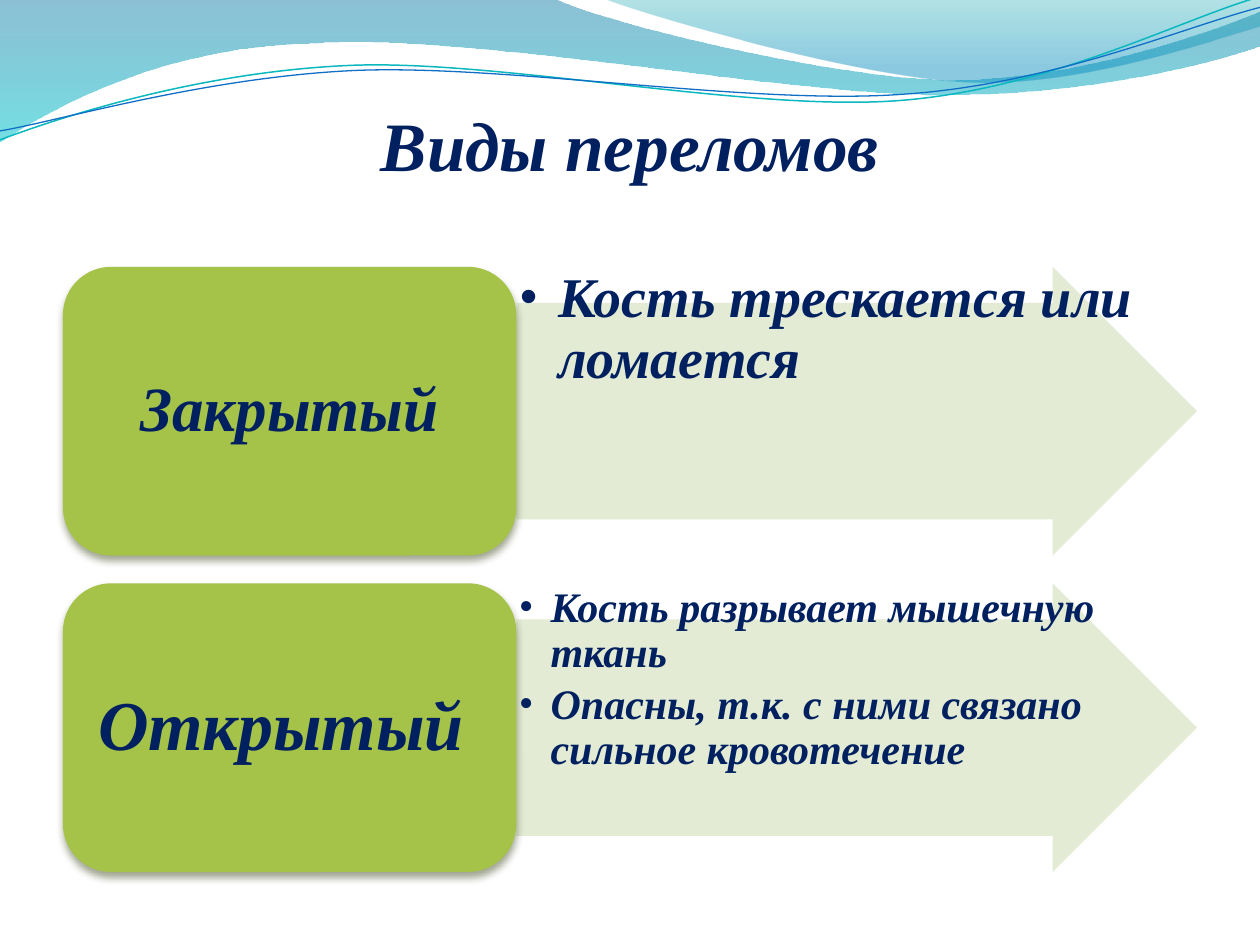
"""Builds a slide on the two kinds of bone fracture."""
from lxml import etree
from pptx import Presentation
from pptx import util as u
from pptx.dml.color import RGBColor
from pptx.enum import shapes, text
from pptx.oxml.ns import qn

NAVY = RGBColor(0x00, 0x20, 0x60)
GREEN = RGBColor(0xA5, 0xC2, 0x49)
PALE = RGBColor(0xE1, 0xE9, 0xD0)
SHADOW = RGBColor(0x3A, 0x45, 0x19)
STEEL = RGBColor(0x00, 0x74, 0xA1)
AQUA = RGBColor(0x00, 0xC6, 0xCF)
SEA = RGBColor(0x00, 0xA1, 0xA9)
SKY = RGBColor(0x00, 0x8B, 0xBF)
TEAL = RGBColor(0x0A, 0xB8, 0xBF)
BLUE = RGBColor(0x0F, 0x6F, 0xC6)
FONT = "Times New Roman"

WAVE = [(0, 0), (11.18, -0.03), (12.09, 0.43, 16.87, 1.6, 19.25, 1.6),
        (21.67, 1.6, 24.33, 0.66, 25.4, 0.23), (25.43, 0.91),
        (24.97, 1.12, 22.1, 1.93, 18.95, 1.91),
        (15.8, 1.91, 9.7, 0.71, 6.53, 0.86),
        (3.28, 0.91, 1.17, 2.11, -0.03, 2.87)]
FAN = [(12.17, -0.03), (12.93, 0.28, 17.32, 1.57, 19.53, 1.65),
       (21.74, 1.75, 24.41, 0.81, 25.4, 0.53), (25.4, 0)]
TEAL_CURVE = [(0, 2.82), (1.22, 2.36, 4.01, 1.45, 7.04, 1.32),
              (10.03, 1.19, 15.06, 2.26, 18.11, 2.03),
              (21.16, 1.8, 23.83, 0.38, 25.35, -0.05)]
BLUE_CURVE = [(0, 2.64), (1.19, 2.44, 4.17, 1.55, 7.19, 1.42),
              (10.24, 1.3, 15.16, 2.13, 18.21, 1.9),
              (21.23, 1.7, 23.9, 0.53, 25.4, 0.15)]

ROWS = [
    ("Закрытый", 36, ["Кость трескается или ломается"], 32, 0.79),
    ("Открытый ", 40, ["Кость разрывает мышечную ткань",
                       "Опасны, т.к. с ними связано сильное кровотечение"], 24, 0.64),
]


def set_alpha(clr, percent):
    """Make a colour element partly transparent."""
    etree.SubElement(clr, qn("a:alpha"), val=str(percent * 1000))


def write(tf, lines, size, align=text.PP_ALIGN.LEFT, anchor=text.MSO_ANCHOR.TOP,
          inset=0.05, spacing=0.9, after=0, indent=0):
    """Fill a text frame, with bullets where an indent is given."""
    tf.word_wrap = True
    tf.auto_size = text.MSO_AUTO_SIZE.NONE
    tf.vertical_anchor = anchor
    tf.margin_left = tf.margin_right = tf.margin_top = tf.margin_bottom = u.Cm(inset)
    for i, line in enumerate(lines):
        p = tf.add_paragraph() if i else tf.paragraphs[0]
        p.alignment, p.line_spacing, p.space_after = align, spacing, u.Pt(after)
        r = p.add_run()
        r.text = line
        font = r.font
        font.name, font.size, font.bold, font.italic = FONT, u.Pt(size), True, True
        font.color.rgb = NAVY
        if indent:
            p.level = 1
            pPr = p._p.get_or_add_pPr()
            pPr.set("marL", str(u.Cm(indent)))
            pPr.set("indent", str(-u.Cm(indent)))
            etree.SubElement(pPr, qn("a:buFont"), typeface=FONT)
            etree.SubElement(pPr, qn("a:buChar"), char="•")


class Deck:
    """Holds the presentation, the current slide and its drawing style."""

    def __init__(self):
        """Open a title-only slide."""
        self.prs = Presentation()
        self.prs.slide_width, self.prs.slide_height = u.Cm(25.4), u.Cm(19.05)
        self.s = self.prs.slides.add_slide(self.prs.slide_layouts[5])

    def title(self, line):
        """Place and format the title."""
        sp = self.s.shapes.title
        sp.left, sp.top, sp.width, sp.height = map(u.Cm, (1.27, 1.96, 22.86, 1.78))
        write(sp.text_frame, [line], 39.6, align=text.PP_ALIGN.CENTER,
              anchor=text.MSO_ANCHOR.BOTTOM, inset=0, spacing=1)

    def outline(self, segments, close):
        """Draw a freeform of straight lines and Bezier curves."""
        ends = [tuple(map(u.Cm, seg[-2:])) for seg in segments]
        builder = self.s.shapes.build_freeform(*ends[0])
        builder.add_line_segments(ends[1:], close=close)
        sp = builder.convert_to_shape()
        sp.shadow.inherit = False
        for line, seg in zip(list(sp._element.iter(qn("a:lnTo"))), segments[1:]):
            if len(seg) == 6:
                line.tag = qn("a:cubicBezTo")
                for i in (0, 2):
                    pt = etree.Element(qn("a:pt"), x=str(u.Cm(seg[i]) - sp.left),
                                       y=str(u.Cm(seg[i + 1]) - sp.top))
                    line.insert(i // 2, pt)
        return sp

    def band(self, segments, stops):
        """Draw a closed area with a see-through vertical gradient."""
        sp = self.outline(segments, True)
        sp.line.fill.background()
        sp.fill.gradient()
        sp.fill.gradient_angle = 270
        for stop, (position, color, _) in zip(sp.fill.gradient_stops, stops):
            stop.position, stop.color.rgb = position, color
        for clr, (_, _, alpha) in zip(sp._element.iter(qn("a:srgbClr")), stops):
            set_alpha(clr, alpha)

    def curve(self, segments, color, width):
        """Draw an open curved line."""
        sp = self.outline(segments, False)
        sp.fill.background()
        sp.line.color.rgb, sp.line.width = color, u.Pt(width)

    def block(self, kind, box, color):
        """Draw a preset shape with a plain fill."""
        sp = self.s.shapes.add_shape(kind, *map(u.Cm, box))
        sp.shadow.inherit = False
        sp.fill.solid()
        sp.fill.fore_color.rgb = color
        sp.line.fill.background()
        return sp

    def arrow(self, box, lines, size, indent):
        """Draw a pale arrow with a bulleted list over it."""
        sp = self.block(shapes.MSO_SHAPE.RIGHT_ARROW, box, PALE)
        sp.adjustments[0], sp.adjustments[1] = 0.75, 0.5
        set_alpha(next(sp._element.iter(qn("a:srgbClr"))), 90)
        tb = self.s.shapes.add_textbox(*map(u.Cm, box))
        write(tb.text_frame, lines, size, after=size * 0.15, indent=indent)

    def card(self, box, label, size):
        """Draw a rounded label with a soft shadow below."""
        sp = self.block(shapes.MSO_SHAPE.ROUNDED_RECTANGLE, box, GREEN)
        effects = sp._element.spPr.find(qn("a:effectLst"))
        shadow = etree.SubElement(effects, qn("a:outerShdw"), blurRad=str(u.Pt(4.5)),
                                  dist=str(u.Pt(3)), dir="5400000", rotWithShape="0")
        set_alpha(etree.SubElement(shadow, qn("a:srgbClr"), val=str(SHADOW)), 48)
        write(sp.text_frame, [label], size, align=text.PP_ALIGN.CENTER,
              anchor=text.MSO_ANCHOR.MIDDLE, inset=0.2)


def main():
    """Build and save the slide."""
    deck = Deck()
    deck.band(WAVE, [(0, STEEL, 45), (1, AQUA, 55)])
    deck.band(FAN, [(0, SEA, 30), (0.8, SKY, 45)])
    deck.curve(TEAL_CURVE, TEAL, 0.85)
    deck.curve(BLUE_CURVE, BLUE, 0.75)
    deck.title("Виды переломов")
    left, top, height, pitch, card_width, arrow_width = 1.27, 5.38, 5.82, 6.38, 9.14, 13.72
    for i, (label, label_size, lines, size, indent) in enumerate(ROWS):
        y = top + i * pitch
        deck.arrow((left + card_width, y, arrow_width, height), lines, size, indent)
        deck.card((left, y, card_width, height), label, label_size)
    deck.prs.save("out.pptx")


if __name__ == "__main__":
    main()
